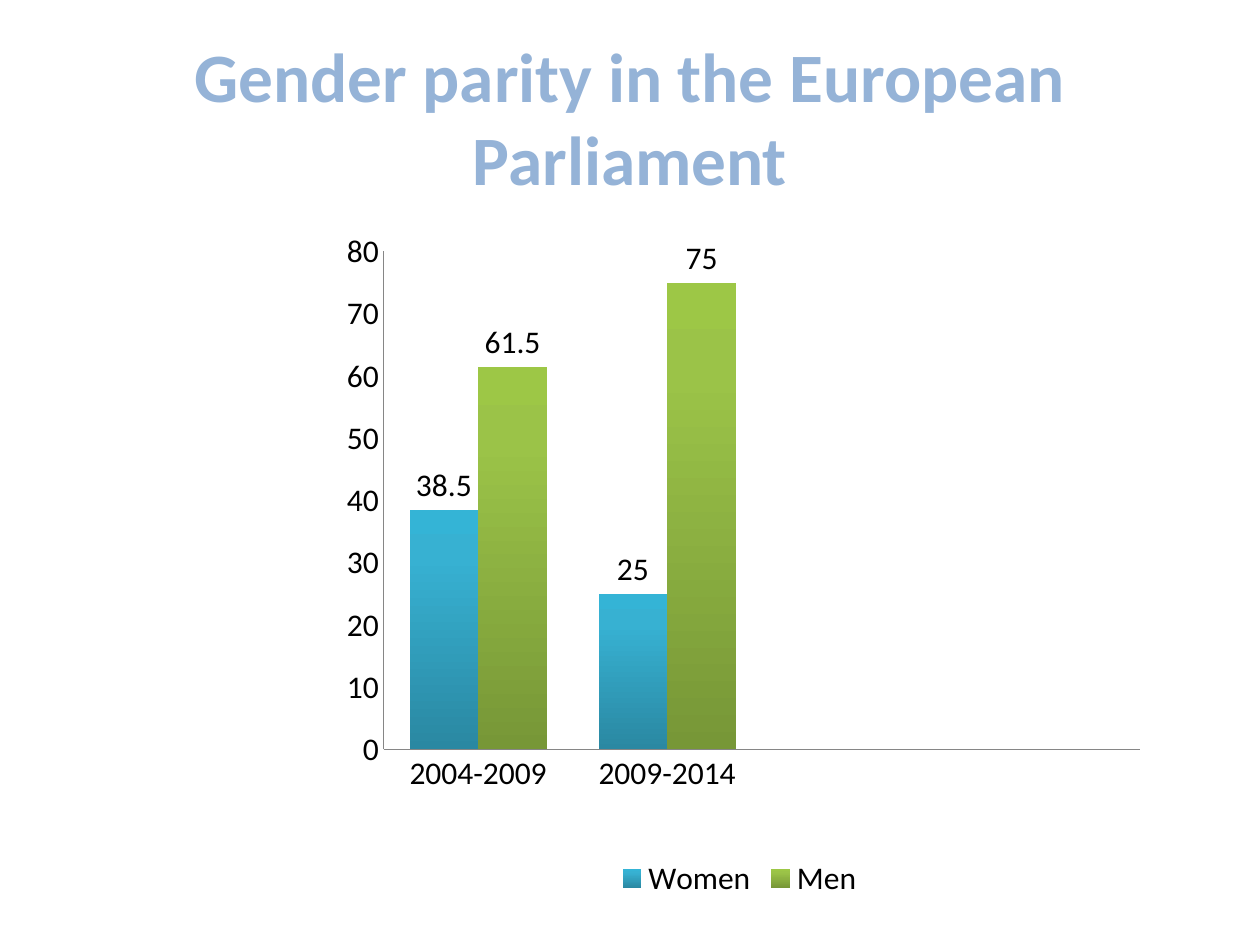
from copy import deepcopy

from lxml import etree
from pptx import Presentation
from pptx import util as u
from pptx.chart import data as cd
from pptx.dml import color as dc
from pptx.enum import chart as ce
from pptx.enum import text as te
from pptx.oxml import ns

TITLE = "Gender parity in the European Parliament"
TERMS = ["2004-2009", "2009-2014", "", ""]
SHARES = {
    "Women": [38.5, 25, None, None],
    "Men": [61.5, 75, None, None],
}
THEME = {
    "font": "Calibri",
    "title": {"size": 39.6, "color": "95B3D7"},
    "chart": {"size": 18, "color": "000000"},
    "axis": "868686",
    "Women": [(0, "2A88A2"), (0.8, "37B1D2"), (1, "34B4D6")],
    "Men": [(0, "779737"), (0.8, "9BC348"), (1, "9DC746")],
}
PLACE = {
    "slide": (25.4, 19.05),
    "title": (1.27, 0.76, 22.86, 3.18),
    "chart": (6.55, 4.45, 16.71, 13.77),
}
PLOT = {"x": 0.071, "y": 0.045, "w": 0.912, "h": 0.729}


def apply(obj, vals):
    for key, val in vals.items():
        setattr(obj, key, val)


def box(name):
    return [u.Cm(n) for n in PLACE[name]]


def style(font, name, bold=False):
    look = THEME[name]
    apply(font, {"name": THEME["font"], "size": u.Pt(look["size"]), "bold": bold})
    font.color.rgb = dc.RGBColor.from_string(look["color"])


def shade(bars, stops):
    fill = bars.format.fill
    fill.gradient()
    fill.gradient_angle = 90
    group = bars._element.find(".//" + ns.qn("a:gsLst"))
    group.append(deepcopy(group[-1]))
    for stop, (pos, tint) in zip(fill.gradient_stops, stops):
        stop.position = pos
        stop.color.rgb = dc.RGBColor.from_string(tint)


def fix_plot(chart):
    area = chart._chartSpace.chart.plotArea
    for old in area.findall(ns.qn("c:layout")):
        area.remove(old)
    frame = etree.Element(ns.qn("c:layout"))
    inner = etree.SubElement(frame, ns.qn("c:manualLayout"))
    vals = {"layoutTarget": "inner", "xMode": "edge", "yMode": "edge", **PLOT}
    for tag, val in vals.items():
        etree.SubElement(inner, ns.qn("c:" + tag)).set("val", str(val))
    area.insert(0, frame)


def add_title(slide):
    title = slide.shapes.title
    apply(title, dict(zip(("left", "top", "width", "height"), box("title"))))
    frame = title.text_frame
    frame.text = TITLE
    apply(frame, {"word_wrap": True, "vertical_anchor": te.MSO_ANCHOR.MIDDLE})
    line = frame.paragraphs[0]
    line.alignment = te.PP_ALIGN.CENTER
    style(line.runs[0].font, "title", True)


def add_bars(slide):
    data = cd.CategoryChartData()
    data.categories = TERMS
    for name, vals in SHARES.items():
        data.add_series(name, vals)
    kind = ce.XL_CHART_TYPE.COLUMN_CLUSTERED
    chart = slide.shapes.add_chart(kind, *box("chart"), data).chart
    apply(chart, {"has_title": False, "has_legend": True})
    style(chart.font, "chart")
    apply(chart.legend, {
        "position": ce.XL_LEGEND_POSITION.BOTTOM,
        "include_in_layout": False,
    })
    for axis in (chart.category_axis, chart.value_axis):
        apply(axis, {
            "has_major_gridlines": False,
            "major_tick_mark": ce.XL_TICK_MARK.NONE,
            "minor_tick_mark": ce.XL_TICK_MARK.NONE,
        })
        axis.format.line.color.rgb = dc.RGBColor.from_string(THEME["axis"])
        axis.format.line.width = u.Pt(0.75)
    apply(chart.value_axis, {
        "minimum_scale": 0, "maximum_scale": 80, "major_unit": 10,
    })
    plot = chart.plots[0]
    apply(plot, {"gap_width": 75, "overlap": 0, "vary_by_categories": False})
    for bars in plot.series:
        shade(bars, THEME[bars.name])
        apply(bars.data_labels, {
            "show_value": True,
            "position": ce.XL_LABEL_POSITION.OUTSIDE_END,
        })
    fix_plot(chart)


def main():
    deck = Presentation()
    apply(deck, dict(zip(("slide_width", "slide_height"), box("slide"))))
    slide = deck.slides.add_slide(deck.slide_layouts[5])
    add_title(slide)
    add_bars(slide)
    deck.save("out.pptx")


if __name__ == "__main__":
    main()
